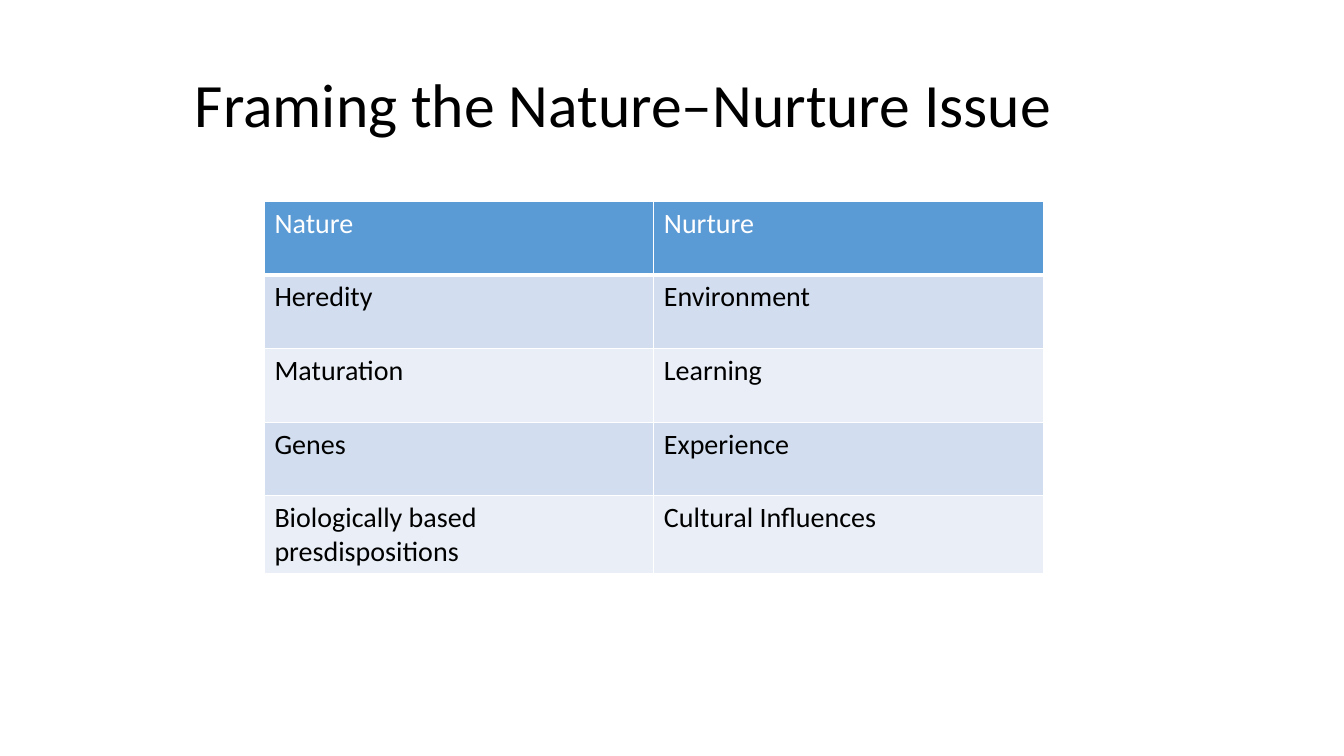
from lxml import etree
from pptx import Presentation
from pptx import util as u
from pptx.dml.color import RGBColor
from pptx.enum import text
from pptx.oxml import ns

BLACK = RGBColor(0x00, 0x00, 0x00)
WHITE = RGBColor(0xFF, 0xFF, 0xFF)
HEADER_BLUE = RGBColor(0x5B, 0x9B, 0xD5)
BAND_DARK = RGBColor(0xD2, 0xDE, 0xEF)
BAND_LIGHT = RGBColor(0xEA, 0xEF, 0xF7)

NATURE_NURTURE = [
    ("Nature", "Nurture"),
    ("Heredity", "Environment"),
    ("Maturation", "Learning"),
    ("Genes", "Experience"),
    ("Biologically based presdispositions", "Cultural Influences"),
]


class SlideBuilder:
    """Place styled elements on a slide grid of 40 columns by 30 rows."""

    FONT = "Calibri"
    COLUMNS, ROWS = 40, 30

    def __init__(self, presentation):
        self.column = presentation.slide_width / self.COLUMNS
        self.row = presentation.slide_height / self.ROWS
        self.slide = presentation.slides.add_slide(presentation.slide_layouts[6])

    def box(self, left, top, width, height):
        return (round(left * self.column), round(top * self.row),
                round(width * self.column), round(height * self.row))

    def style(self, paragraph, size, color):
        paragraph.font.name = self.FONT
        paragraph.font.size = u.Pt(size)
        paragraph.font.bold = False
        paragraph.font.color.rgb = color

    def title(self, wording, *place):
        frame = self.slide.shapes.add_textbox(*self.box(*place)).text_frame
        frame.word_wrap = True
        frame.vertical_anchor = text.MSO_ANCHOR.MIDDLE
        paragraph = frame.paragraphs[0]
        paragraph.text = wording
        paragraph.line_spacing = 0.9
        self.style(paragraph, 44, BLACK)

    def borders(self, cell, bottom_width):
        properties = cell._tc.get_or_add_tcPr()
        widths = {"L": 1, "R": 1, "T": 1, "B": bottom_width}
        for index, (side, width) in enumerate(widths.items()):
            line = etree.Element(ns.qn(f"a:ln{side}"), w=str(u.Pt(width)))
            fill = etree.SubElement(line, ns.qn("a:solidFill"))
            etree.SubElement(fill, ns.qn("a:srgbClr"), val=str(WHITE))
            properties.insert(index, line)

    def table(self, records, *place):
        shape = self.slide.shapes.add_table(
            len(records), len(records[0]), *self.box(*place))
        for row_index, record in enumerate(records):
            header = row_index == 0
            band = BAND_DARK if row_index % 2 else BAND_LIGHT
            for column_index, wording in enumerate(record):
                cell = shape.table.cell(row_index, column_index)
                cell.text = wording
                cell.fill.solid()
                cell.fill.fore_color.rgb = HEADER_BLUE if header else band
                self.style(cell.text_frame.paragraphs[0], 20,
                           WHITE if header else BLACK)
                self.borders(cell, 3 if header else 1)


def main():
    presentation = Presentation()
    presentation.slide_width = u.Inches(13.33)
    presentation.slide_height = u.Inches(7.5)
    builder = SlideBuilder(presentation)
    builder.title("Framing the Nature–Nurture Issue", 5.5, 1.36, 34.5, 5.8)
    builder.table(NATURE_NURTURE, 7.87, 8, 23.18, 14.6)
    presentation.save("out.pptx")


if __name__ == "__main__":
    main()
